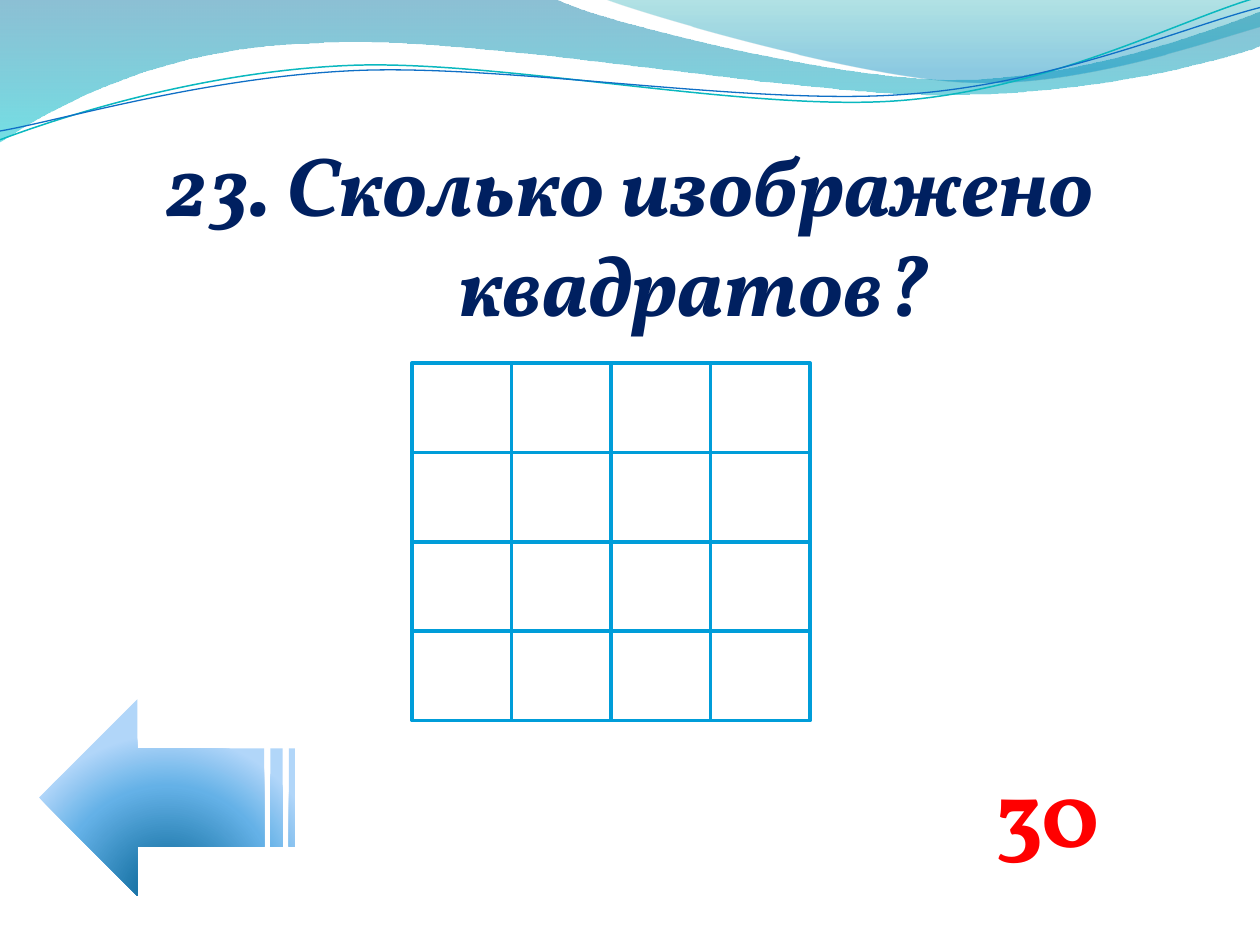
from itertools import product
from lxml import etree
from pptx import Presentation
from pptx.dml.color import RGBColor
from pptx.enum.shapes import MSO_SHAPE
from pptx.enum.text import MSO_AUTO_SIZE, PP_ALIGN
from pptx.oxml import parse_xml
from pptx.oxml.ns import qn
from pptx.util import Inches, Pt

RECT = MSO_SHAPE.RECTANGLE
STRIPED_ARROW = MSO_SHAPE.STRIPED_RIGHT_ARROW
CENTER = PP_ALIGN.CENTER
GROW = MSO_AUTO_SIZE.SHAPE_TO_FIT_TEXT
NS = "http://schemas.openxmlformats.org/drawingml/2006/main"
COLS, ROWS = 10, 7.5

COLORS = {
    "white": "FFFFFF", "navy": "002060", "red": "FF0000", "cell": "009DD9",
    "sea": "0074A1", "aqua": "00C6CF", "teal": "00A1A9", "sky": "008BBF",
    "teal_line": "0AB8BF", "blue_line": "0F6FC6", "deep": "006091",
    "mid": "64B1E7", "pale": "B1D6F9",
}

DOWN = '<a:lin ang="5400000" scaled="0"/>'
FROM_BELOW = ('<a:path path="circle"><a:fillToRect l="50000" t="130000" '
              'r="50000" b="-30000"/></a:path>')

WIDE_WAVE = [
    [(0, 0)], [(4.4, -0.01)],
    [(4.76, 0.17), (6.64, 0.63), (7.58, 0.63)],
    [(8.53, 0.63), (9.58, 0.26), (10, 0.09)], [(10.01, 0.36)],
    [(9.83, 0.44), (8.7, 0.76), (7.46, 0.75)],
    [(6.22, 0.75), (3.82, 0.28), (2.57, 0.34)],
    [(1.29, 0.36), (0.46, 0.83), (-0.01, 1.13)],
]
RIGHT_WAVE = [
    [(4.79, -0.01)], [(5.09, 0.11), (6.82, 0.62), (7.69, 0.65)],
    [(8.56, 0.69), (9.61, 0.32), (10, 0.21)], [(10, 0)],
]
TEAL_CURVE = [
    [(0, 1.11)], [(0.48, 0.93), (1.58, 0.57), (2.77, 0.52)],
    [(3.95, 0.47), (5.93, 0.89), (7.13, 0.8)],
    [(8.33, 0.71), (9.38, 0.15), (9.98, -0.02)],
]
BLUE_CURVE = [
    [(0, 1.04)], [(0.47, 0.96), (1.64, 0.61), (2.83, 0.56)],
    [(4.03, 0.51), (5.97, 0.84), (7.17, 0.75)],
    [(8.36, 0.67), (9.41, 0.21), (10, 0.06)],
]


def rgb(name):
    return RGBColor.from_string(COLORS[name])


class Deck:
    font = "Vollkorn"

    def __init__(self):
        self.prs = Presentation()
        self.prs.slide_width, self.prs.slide_height = Inches(10), Inches(7.5)
        self.s = self.prs.slides.add_slide(self.prs.slide_layouts[6])

    def x(self, col):
        return round(self.prs.slide_width * col / COLS)

    def y(self, row):
        return round(self.prs.slide_height * row / ROWS)

    def box(self, col, row, width, height):
        return self.x(col), self.y(row), self.x(width), self.y(height)

    def gradient(self, sp, stops, direction):
        gs = "".join(
            f'<a:gs pos="{pos * 1000}"><a:srgbClr val="{COLORS[name]}">'
            f'<a:alpha val="{alpha * 1000}"/></a:srgbClr></a:gs>'
            for pos, name, alpha in stops)
        sp.fill.background()
        old = sp._element.spPr.find(qn("a:noFill"))
        old.getparent().replace(old, parse_xml(
            f'<a:gradFill xmlns:a="{NS}" rotWithShape="1">'
            f'<a:gsLst>{gs}</a:gsLst>{direction}</a:gradFill>'))

    def outline(self, segments, closed):
        points = [(self.x(c), self.y(r)) for seg in segments for c, r in seg]
        builder = self.s.shapes.build_freeform(*points[0])
        builder.add_line_segments(points[1:], close=False)
        sp = builder.convert_to_shape()
        sp.shadow.inherit = False
        lines = iter(list(sp._element.iter(qn("a:lnTo"))))
        for seg in segments[1:]:
            first, *rest = [next(lines) for _ in seg]
            if rest:
                first.tag_name = None
                bezier = etree.Element(qn("a:cubicBezTo"))
                first.addprevious(bezier)
                for line in (first, *rest):
                    bezier.append(line[0])
                    line.getparent().remove(line)
        if closed:
            start = next(sp._element.iter(qn("a:moveTo")))
            etree.SubElement(start.getparent(), qn("a:close"))
        return sp

    def wave(self, segments, stops):
        sp = self.outline(segments, True)
        self.gradient(sp, stops, DOWN)
        sp.line.fill.background()

    def curve(self, segments, color, width):
        sp = self.outline(segments, False)
        sp.fill.background()
        sp.line.color.rgb = rgb(color)
        sp.line.width = Pt(width)

    def text(self, place, words, size, color, italic=False, hanging=0):
        tf = self.s.shapes.add_textbox(*self.box(*place)).text_frame
        tf.word_wrap = True
        tf.auto_size = GROW
        p = tf.paragraphs[0]
        p.alignment = CENTER
        if hanging:
            pPr = p._p.get_or_add_pPr()
            pPr.set("marL", str(self.x(hanging)))
            pPr.set("indent", str(-self.x(hanging)))
        r = p.add_run()
        r.text = words
        r.font.name, r.font.size = self.font, Pt(size)
        r.font.bold, r.font.italic = True, italic
        r.font.color.rgb = rgb(color)

    def squares(self, col, row, width, height, count):
        group = self.s.shapes.add_group_shape()
        for i, j in product(range(count), repeat=2):
            sp = group.shapes.add_shape(RECT, *self.box(
                col + i * width, row + j * height, width, height))
            sp.shadow.inherit = False
            sp.fill.solid()
            sp.fill.fore_color.rgb = rgb("white")
            sp.line.color.rgb = rgb("cell")
            sp.line.width = Pt(2)

    def back_arrow(self, place, stops):
        sp = self.s.shapes.add_shape(STRIPED_ARROW, *self.box(*place))
        sp.rotation = 180
        sp.shadow.inherit = False
        self.gradient(sp, stops, FROM_BELOW)
        sp.line.fill.background()


def main():
    deck = Deck()
    deck.wave(WIDE_WAVE, [(0, "sea", 45), (100, "aqua", 55)])
    deck.wave(RIGHT_WAVE, [(0, "teal", 30), (80, "sky", 45)])
    deck.curve(TEAL_CURVE, "teal_line", 0.85)
    deck.curve(BLUE_CURVE, "blue_line", 0.75)
    deck.text((0, 1, 10, 1.72), "23. Сколько изображено квадратов?",
              48, "navy", italic=True, hanging=1)
    deck.text((6.87, 5.93, 2.89, 1.01), "30", 54, "red")
    deck.back_arrow((0.31, 5.55, 2.03, 1.56),
                    [(0, "deep", 100), (68, "mid", 100), (100, "pale", 100)])
    deck.squares(3.27, 2.88, 0.79, 0.71, 4)
    deck.prs.save("out.pptx")


if __name__ == "__main__":
    main()
